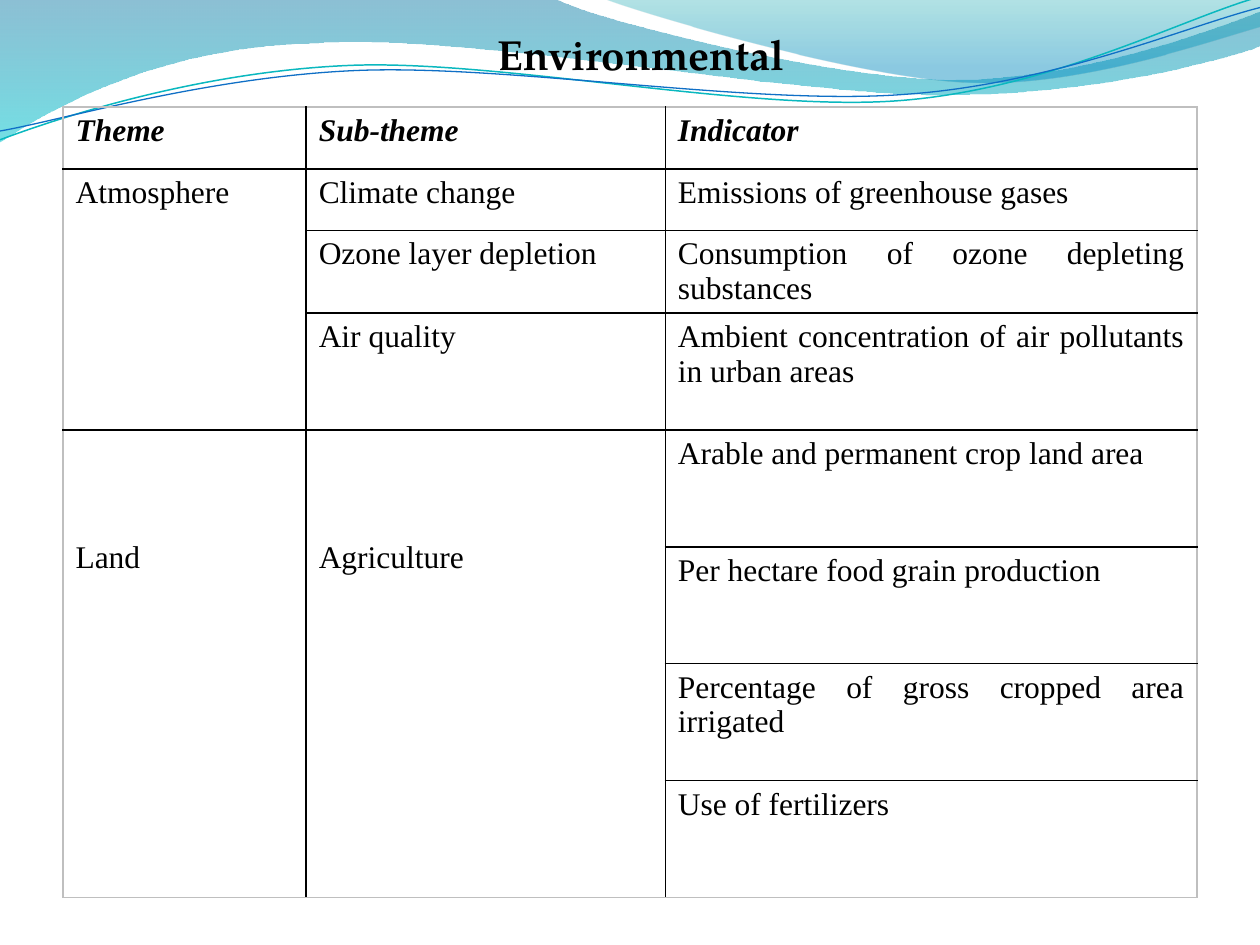
from lxml.etree import SubElement
from pptx import Presentation
from pptx.dml.color import RGBColor
from pptx.enum.text import MSO_AUTO_SIZE, PP_ALIGN
from pptx.oxml import parse_xml
from pptx.oxml.ns import nsdecls, qn
from pptx.util import Inches, Pt

TITLE = [("Environmental", 24, True), (" ", 18, False)]
HEADINGS = ["Theme", "Sub-theme", "Indicator"]
THEMES = [
    ("Atmosphere", 0.05, [
        ("Climate change", ["Emissions of greenhouse gases"]),
        ("Ozone layer depletion", ["Consumption of ozone depleting substances"]),
        ("Air quality", ["Ambient concentration of air pollutants in urban areas"]),
    ]),
    ("Land", 0.88, [
        ("Agriculture", [
            "Arable and permanent crop land area",
            "Per hectare food grain production",
            "Percentage of gross cropped area irrigated",
            "Use of fertilizers",
        ]),
    ]),
]
COLUMNS = [1.93, 2.85, 4.22]
ROWS = [0.49, 0.49, 0.65] + [4.64 / 5] * 5
TABLE_LEFT, TABLE_TOP = 0.5, 0.85
GRID_LINE, OUTER_LINE = "000000", "BFBFBF"

BANDS = [
    ([(0, 0), (4.4, -0.01),
      (4.76, 0.17, 6.64, 0.63, 7.58, 0.63), (8.53, 0.63, 9.58, 0.26, 10, 0.09),
      (10.01, 0.36),
      (9.83, 0.44, 8.7, 0.76, 7.46, 0.75), (6.22, 0.75, 3.82, 0.28, 2.57, 0.34),
      (1.29, 0.36, 0.46, 0.83, -0.01, 1.13)],
     [(0, "0074A1", 45), (1, "00C6CF", 55)]),
    ([(4.79, -0.01),
      (5.09, 0.11, 6.82, 0.62, 7.69, 0.65), (8.56, 0.69, 9.61, 0.32, 10, 0.21),
      (10, 0)],
     [(0, "00A1A9", 30), (0.8, "008BBF", 45)]),
]
WAVES = [
    ([(0, 1.11), (0.48, 0.93, 1.58, 0.57, 2.77, 0.52),
      (3.95, 0.47, 5.93, 0.89, 7.13, 0.8), (8.33, 0.71, 9.38, 0.15, 9.98, -0.02)],
     "0AB8BF", 0.85),
    ([(0, 1.04), (0.47, 0.96, 1.64, 0.61, 2.83, 0.56),
      (4.03, 0.51, 5.97, 0.84, 7.17, 0.75), (8.36, 0.67, 9.41, 0.21, 10, 0.06)],
     "0F6FC6", 0.75),
]


def rgb(value):
    return RGBColor.from_string(value)


def add_curve(slide, outline, close):
    start, *ends = [(Inches(step[-2]), Inches(step[-1])) for step in outline]
    builder = slide.shapes.build_freeform(*start)
    builder.add_line_segments(ends, close=close)
    curve = builder.convert_to_shape()
    curve.shadow.inherit = False
    for segment, step in zip(list(curve.element.iter(qn("a:lnTo"))), outline[1:]):
        if len(step) == 6:
            segment.tag = qn("a:cubicBezTo")
            for index, (x, y) in enumerate((step[:2], step[2:4])):
                segment.insert(index, parse_xml(
                    f'<a:pt {nsdecls("a")} x="{Inches(x) - curve.left}"'
                    f' y="{Inches(y) - curve.top}"/>'))
    return curve


def add_band(slide, outline, stops):
    band = add_curve(slide, outline, True)
    band.line.fill.background()
    band.fill.gradient()
    band.fill.gradient_angle = 270
    for stop, (position, color, _) in zip(band.fill.gradient_stops, stops):
        stop.position = position
        stop.color.rgb = rgb(color)
    for node, (_, _, opacity) in zip(band.element.iter(qn("a:srgbClr")), stops):
        SubElement(node, qn("a:alpha"), val=str(opacity * 1000))


def add_wave(slide, outline, color, width):
    wave = add_curve(slide, outline, False)
    wave.fill.background()
    wave.line.color.rgb = rgb(color)
    wave.line.width = Pt(width)


def write(paragraph, text, align, font):
    paragraph.alignment = align
    run = paragraph.add_run()
    run.text = text
    run.font.color.rgb = rgb("000000")
    for name, value in font.items():
        setattr(run.font, name, value)


def add_borders(cell, outer):
    properties = cell._tc.get_or_add_tcPr()
    for index, side in enumerate("LRTB"):
        color = OUTER_LINE if side in outer else GRID_LINE
        properties.insert(index, parse_xml(
            f'<a:ln{side} {nsdecls("a")} w="{Pt(1)}"><a:solidFill>'
            f'<a:srgbClr val="{color}"/></a:solidFill></a:ln{side}>'))


def fill_cell(table, row, column, text, span=1, top=0.05, heading=False):
    cell = table.cell(row, column)
    if span > 1:
        cell.merge(table.cell(row + span - 1, column))
    cell.margin_top = Inches(top)
    write(cell.text_frame.paragraphs[0], text, PP_ALIGN.JUSTIFY,
          {"name": "Times New Roman", "size": Pt(18), "bold": heading, "italic": heading})


def add_indicators(slide):
    table = slide.shapes.add_table(
        len(ROWS), len(COLUMNS), Inches(TABLE_LEFT), Inches(TABLE_TOP),
        Inches(sum(COLUMNS)), Inches(sum(ROWS))).table
    table.first_row = table.horz_banding = False
    for column, width in zip(table.columns, COLUMNS):
        column.width = Inches(width)
    for row, height in zip(table.rows, ROWS):
        row.height = Inches(height)

    for column, heading in enumerate(HEADINGS):
        fill_cell(table, 0, column, heading, heading=True)
    row = 1
    for theme, top, subthemes in THEMES:
        fill_cell(table, row, 0, theme, sum(len(items) for _, items in subthemes), top)
        for subtheme, indicators in subthemes:
            fill_cell(table, row, 1, subtheme, len(indicators), top)
            for indicator in indicators:
                fill_cell(table, row, 2, indicator)
                row += 1

    for r in range(len(ROWS)):
        for c in range(len(COLUMNS)):
            cell = table.cell(r, c)
            cell.fill.background()
            bottom = r + (cell.span_height if cell.is_merge_origin else 1)
            edges = {"L": c == 0, "R": c == len(COLUMNS) - 1,
                     "T": r == 0, "B": bottom == len(ROWS)}
            add_borders(cell, [side for side, is_outer in edges.items() if is_outer])


def add_title(slide):
    frame = slide.shapes.add_textbox(
        Inches(2.58), Inches(0.18), Inches(5.08), Inches(0.5)).text_frame
    frame.word_wrap = True
    frame.auto_size = MSO_AUTO_SIZE.SHAPE_TO_FIT_TEXT
    for text, size, bold in TITLE:
        write(frame.paragraphs[0], text, PP_ALIGN.CENTER,
              {"name": "TeX Gyre Pagella", "size": Pt(size), "bold": bold})


def main():
    deck = Presentation()
    deck.slide_width, deck.slide_height = Inches(10), Inches(7.5)
    slide = deck.slides.add_slide(deck.slide_layouts[6])
    for band in BANDS:
        add_band(slide, *band)
    for wave in WAVES:
        add_wave(slide, *wave)
    add_indicators(slide)
    add_title(slide)
    deck.save("out.pptx")


if __name__ == "__main__":
    main()
